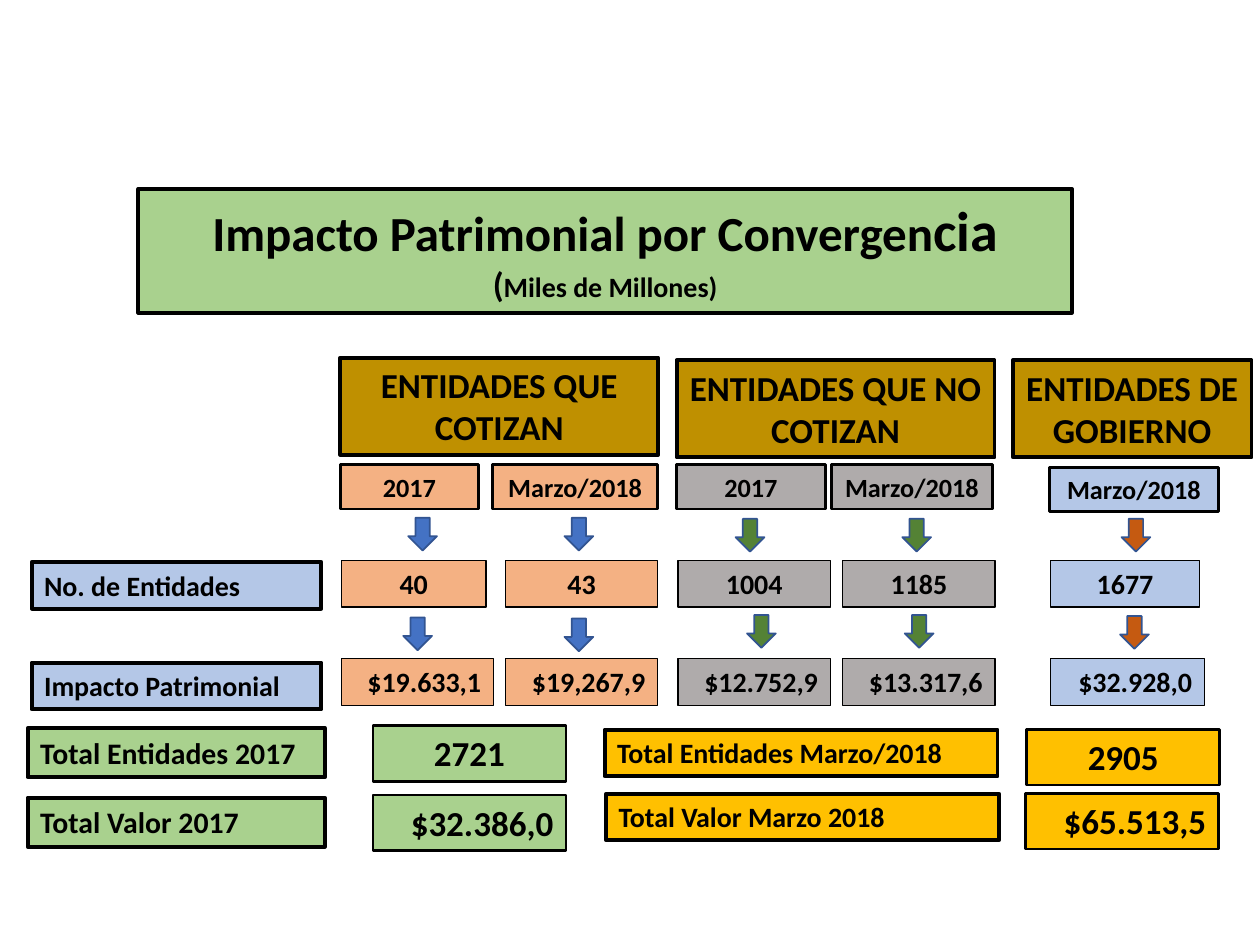
from dataclasses import dataclass

from pptx import Presentation
from pptx import util as u
from pptx.dml.color import RGBColor
from pptx.enum import shapes, text


@dataclass(frozen=True)
class Theme:
    font: str = "Calibri"
    ink: str = "000000"
    arrow_line: str = "325491"
    green: str = "A9D18E"
    blue: str = "B4C7E7"
    gold: str = "BF9000"
    orange: str = "F4B183"
    gray: str = "AFABAB"
    yellow: str = "FFC000"
    arrow_blue: str = "4472C4"
    arrow_green: str = "548235"
    arrow_rust: str = "C55A11"
    title_size: int = 28
    title_end_size: int = 32
    heading_size: int = 20
    total_size: int = 17
    body_size: int = 16
    year_size: int = 15
    thick: float = 2.25
    medium: float = 1.5
    thin: float = 0.75
    arrow_width: float = 1


LEFT = text.PP_ALIGN.LEFT
CENTER = text.PP_ALIGN.CENTER
RIGHT = text.PP_ALIGN.RIGHT


class SlideBuilder:
    def __init__(self, slide, theme):
        self.slide = slide
        self.theme = theme

    def paint(self, shape, fill, line, width):
        shape.fill.solid()
        shape.fill.fore_color.rgb = RGBColor.from_string(fill)
        shape.line.color.rgb = RGBColor.from_string(line)
        shape.line.width = u.Pt(width)

    def style_run(self, run, size):
        run.font.name = self.theme.font
        run.font.size = u.Pt(size)
        run.font.bold = True
        run.font.color.rgb = RGBColor.from_string(self.theme.ink)

    def fit(self, text_frame):
        text_frame.word_wrap = True
        text_frame.auto_size = text.MSO_AUTO_SIZE.SHAPE_TO_FIT_TEXT
        text_frame.vertical_anchor = text.MSO_ANCHOR.TOP

    def title(self, lines, left, top, width, height):
        shape = self.slide.shapes.title
        shape.left, shape.top = u.Cm(left), u.Cm(top)
        shape.width, shape.height = u.Cm(width), u.Cm(height)
        self.paint(shape, self.theme.green, self.theme.ink, self.theme.thick)
        text_frame = shape.text_frame
        self.fit(text_frame)
        for index, pieces in enumerate(lines):
            paragraph = text_frame.add_paragraph() if index else text_frame.paragraphs[0]
            paragraph.alignment = CENTER
            for words, size in pieces:
                run = paragraph.add_run()
                run.text = words
                self.style_run(run, size)

    def shape(self, kind, left, top, width, height):
        shape = self.slide.shapes.add_shape(
            kind, u.Cm(left), u.Cm(top), u.Cm(width), u.Cm(height))
        shape.shadow.inherit = False
        return shape

    def box(self, words, left, top, width, height, fill, line_width, size, alignment=CENTER):
        shape = self.shape(shapes.MSO_SHAPE.RECTANGLE, left, top, width, height)
        self.paint(shape, fill, self.theme.ink, line_width)
        text_frame = shape.text_frame
        self.fit(text_frame)
        text_frame.text = words
        paragraph = text_frame.paragraphs[0]
        paragraph.alignment = alignment
        self.style_run(paragraph.runs[0], size)

    def arrow(self, left, top, fill):
        shape = self.shape(shapes.MSO_SHAPE.DOWN_ARROW, left, top, 0.58, 0.66)
        self.paint(shape, fill, self.theme.arrow_line, self.theme.arrow_width)


@dataclass
class Column:
    year: str
    year_box: tuple
    count: str
    impact: str
    left: float
    count_width: float
    impact_width: float
    upper_arrow: tuple
    lower_arrow: tuple
    fill: str
    arrow_fill: str


def main():
    theme = Theme()
    presentation = Presentation()
    presentation.slide_width, presentation.slide_height = u.Cm(25.4), u.Cm(19.05)
    slide = presentation.slides.add_slide(presentation.slide_layouts[5])
    builder = SlideBuilder(slide, theme)

    builder.title(
        [[("Impacto Patrimonial por Convergen", theme.title_size), ("cia", theme.title_end_size)],
         [("(", theme.heading_size), ("Miles de Millones)", theme.body_size)]],
        2.79, 3.81, 18.82, 2.49)

    for words, top in (("No. de Entidades", 11.33), ("Impacto Patrimonial", 13.36)):
        builder.box(words, 0.64, top, 5.84, 0.94, theme.blue, theme.thick, theme.body_size, LEFT)

    headings = [
        ("ENTIDADES QUE COTIZAN", 6.86, 7.21, 6.41),
        ("ENTIDADES QUE NO COTIZAN", 13.64, 7.26, 6.41),
        ("ENTIDADES DE GOBIERNO", 20.42, 7.26, 4.81),
    ]
    for words, left, top, width in headings:
        builder.box(words, left, top, width, 1.96, theme.gold, theme.thick, theme.heading_size)

    listed = (theme.orange, theme.arrow_blue)
    unlisted = (theme.gray, theme.arrow_green)
    government = (theme.blue, theme.arrow_rust)
    columns = [
        Column("2017", (6.86, 9.37, 2.79), "40", "$19.633,1", 6.88, 2.92, 3.07,
               (8.23, 10.44), (8.13, 12.45), *listed),
        Column("Marzo/2018", (9.93, 9.37, 3.33), "43", "$19,267,9", 10.19, 3.07, 3.07,
               (11.38, 10.44), (11.38, 12.47), *listed),
        Column("2017", (13.64, 9.37, 3), "1004", "$12.752,9", 13.67, 3.07, 3.07,
               (14.83, 10.46), (15.06, 12.4), *unlisted),
        Column("Marzo/2018", (16.76, 9.37, 3.25), "1185", "$13.317,6", 16.99, 3.07, 3.07,
               (18.19, 10.46), (18.24, 12.4), *unlisted),
        Column("Marzo/2018", (21.16, 9.42, 3.4), "1677", "$32.928,0", 21.18, 3, 3.1,
               (22.61, 10.46), (22.58, 12.42), *government),
    ]
    for column in columns:
        builder.box(column.year, *column.year_box, 0.89, column.fill, theme.medium, theme.year_size)
        builder.box(column.count, column.left, 11.3, column.count_width, 0.94,
                    column.fill, theme.thin, theme.body_size)
        builder.box(column.impact, column.left, 13.28, column.impact_width, 0.94,
                    column.fill, theme.thin, theme.body_size, RIGHT)
        for position in (column.upper_arrow, column.lower_arrow):
            builder.arrow(*position, column.arrow_fill)

    green_label = (5.99, 0.99, theme.green, theme.thick, theme.total_size, LEFT)
    yellow_label = (7.92, 0.94, theme.yellow, theme.thick, theme.body_size, LEFT)
    green_value = (3.89, 1.12, theme.green, theme.medium, theme.heading_size)
    yellow_value = (3.89, 1.12, theme.yellow, theme.medium, theme.heading_size)
    totals = [
        ("Total Entidades 2017", 0.56, 14.68, *green_label),
        ("Total Valor 2017", 0.56, 16.08, *green_label),
        ("2721", 7.52, 14.63, *green_value, CENTER),
        ("$32.386,0", 7.52, 16.03, *green_value, RIGHT),
        ("Total Entidades Marzo/2018", 12.19, 14.71, *yellow_label),
        ("Total Valor Marzo 2018", 12.22, 16, *yellow_label),
        ("2905", 20.7, 14.71, *yellow_value, CENTER),
        ("$65.513,5", 20.68, 16, *yellow_value, RIGHT),
    ]
    for total in totals:
        builder.box(*total)

    presentation.save("out.pptx")


if __name__ == "__main__":
    main()
